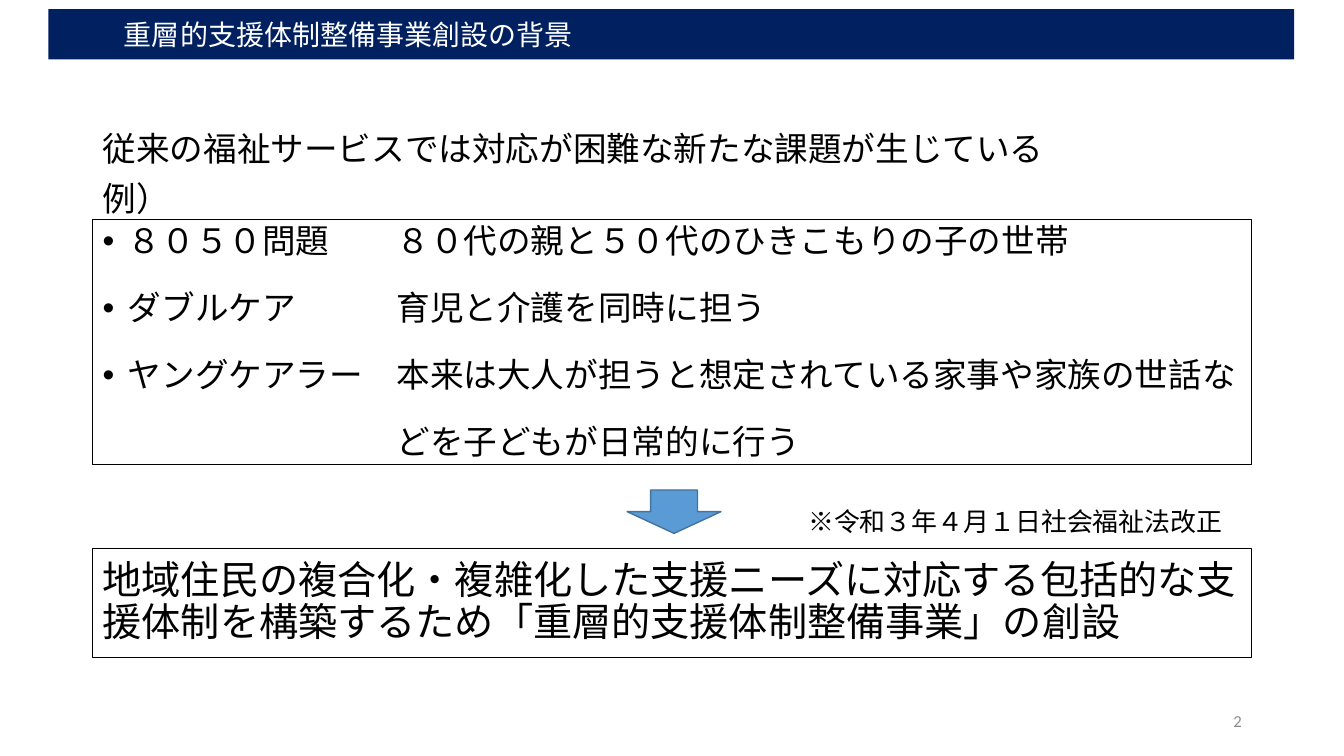
from lxml.etree import SubElement
from pptx import Presentation
from pptx.dml.color import RGBColor
from pptx.enum.shapes import MSO_SHAPE
from pptx.enum.text import MSO_ANCHOR, MSO_AUTO_SIZE, PP_ALIGN
from pptx.oxml.ns import qn
from pptx.util import Pt

NAVY = RGBColor(0x00, 0x20, 0x60)
BLUE = RGBColor(0x5B, 0x9B, 0xD5)
EDGE = RGBColor(0x43, 0x73, 0x9E)
BLACK = RGBColor(0x00, 0x00, 0x00)
WHITE = RGBColor(0xFF, 0xFF, 0xFF)
GRAY = RGBColor(0x8C, 0x8C, 0x8C)

LEFT, WIDTH = 66.24, 828
HANG, STOP = 18, 210
BODY = {"line_spacing": 0.9, "space_before": Pt(10), "alignment": PP_ALIGN.LEFT}
LIST = {**BODY, "space_after": Pt(12)}
ISSUES = [
    ("８０５０問題", "８０代の親と５０代のひきこもりの子の世帯"),
    ("ダブルケア", "育児と介護を同時に担う"),
    ("ヤングケアラー", "本来は大人が担うと想定されている家事や家族の世話な"),
]


def put(item, values):
    """Set each named attribute of an item."""
    for name, value in values.items():
        setattr(item, name, value)


def place(shape, box):
    """Move and size a shape in points."""
    put(shape, dict(zip(("left", "top", "width", "height"), map(Pt, box))))


def write(shape, lines, size, color=BLACK, font="Calibri", style=BODY, **frame):
    """Fill a shape with one paragraph per line."""
    text = shape.text_frame
    put(text, {"word_wrap": True, "auto_size": MSO_AUTO_SIZE.NONE, **frame})
    text.text = "\n".join(lines)
    for para in text.paragraphs:
        put(para, style)
        for run in para.runs:
            put(run.font, {"size": Pt(size), "name": font})
            run.font.color.rgb = color
    return text.paragraphs


def draw(slide, kind, box, line, weight, fill=None):
    """Add an outlined preset shape."""
    shape = slide.shapes.add_shape(kind, *map(Pt, box))
    shape.shadow.inherit = False
    if fill is None:
        shape.fill.background()
    else:
        shape.fill.solid()
        shape.fill.fore_color.rgb = fill
    shape.line.color.rgb = line
    shape.line.width = Pt(weight)
    return shape


def note(slide, box, lines, size, **style):
    """Add a plain text box."""
    return write(slide.shapes.add_textbox(*map(Pt, box)), lines, size, **style)


def head(slide, text):
    """Turn the title placeholder into the navy bar."""
    bar = slide.shapes.title
    place(bar, (34.56, 6.48, 889.92, 36))
    bar.fill.solid()
    bar.fill.fore_color.rgb = NAVY
    write(bar, [text], 20, WHITE, "Noto Sans CJK JP", {"alignment": PP_ALIGN.LEFT},
          vertical_anchor=MSO_ANCHOR.MIDDLE, margin_left=Pt(54))


def indent(para, left, first=0):
    """Set the left margin and first-line indent."""
    props = para._p.get_or_add_pPr()
    props.set("marL", str(Pt(left)))
    props.set("indent", str(Pt(first)))
    return props


def bullet(para):
    """Give a paragraph a hanging bullet and a tab stop."""
    props = indent(para, HANG, -HANG)
    SubElement(props, qn("a:buFont"), typeface="Arial")
    SubElement(props, qn("a:buChar"), char="•")
    tabs = SubElement(props, qn("a:tabLst"))
    SubElement(tabs, qn("a:tab"), pos=str(Pt(STOP)), algn="l")


def issues(slide):
    """Add the framed list of issues."""
    box = draw(slide, MSO_SHAPE.RECTANGLE, (LEFT, 157, WIDTH, 175), BLACK, 0.75)
    lines = ["\t".join(pair) for pair in ISSUES] + ["どを子どもが日常的に行う"]
    *items, rest = write(box, lines, 24, style=LIST, vertical_anchor=MSO_ANCHOR.TOP)
    for item in items:
        bullet(item)
    indent(rest, STOP)


def main():
    """Build and save the slide."""
    deck = Presentation()
    put(deck, {"slide_width": Pt(960), "slide_height": Pt(540)})
    slide = deck.slides.add_slide(deck.slide_layouts[5])
    middle = {"vertical_anchor": MSO_ANCHOR.MIDDLE}
    head(slide, "重層的支援体制整備事業創設の背景")
    note(slide, (LEFT, 90.72, WIDTH, 34.56),
         ["従来の福祉サービスでは対応が困難な新たな課題が生じている", "例）"], 24)
    issues(slide)
    draw(slide, MSO_SHAPE.DOWN_ARROW, (448, 350, 67, 31), EDGE, 1, BLUE)
    note(slide, (570.24, 355, 334, 36.72), ["※令和３年４月１日社会福祉法改正"], 18.5, **middle)
    goal = draw(slide, MSO_SHAPE.RECTANGLE, (LEFT, 391.68, WIDTH, 78), BLACK, 0.75)
    write(goal, ["地域住民の複合化・複雑化した支援ニーズに対応する包括的な支援体制を構築するため"
                 "「重層的支援体制整備事業」の創設"], 28, **middle)
    note(slide, (678.24, 500.4, 216, 28.8), ["2"], 12, color=GRAY,
         style={"alignment": PP_ALIGN.RIGHT}, **middle)
    deck.save("out.pptx")


if __name__ == "__main__":
    main()
